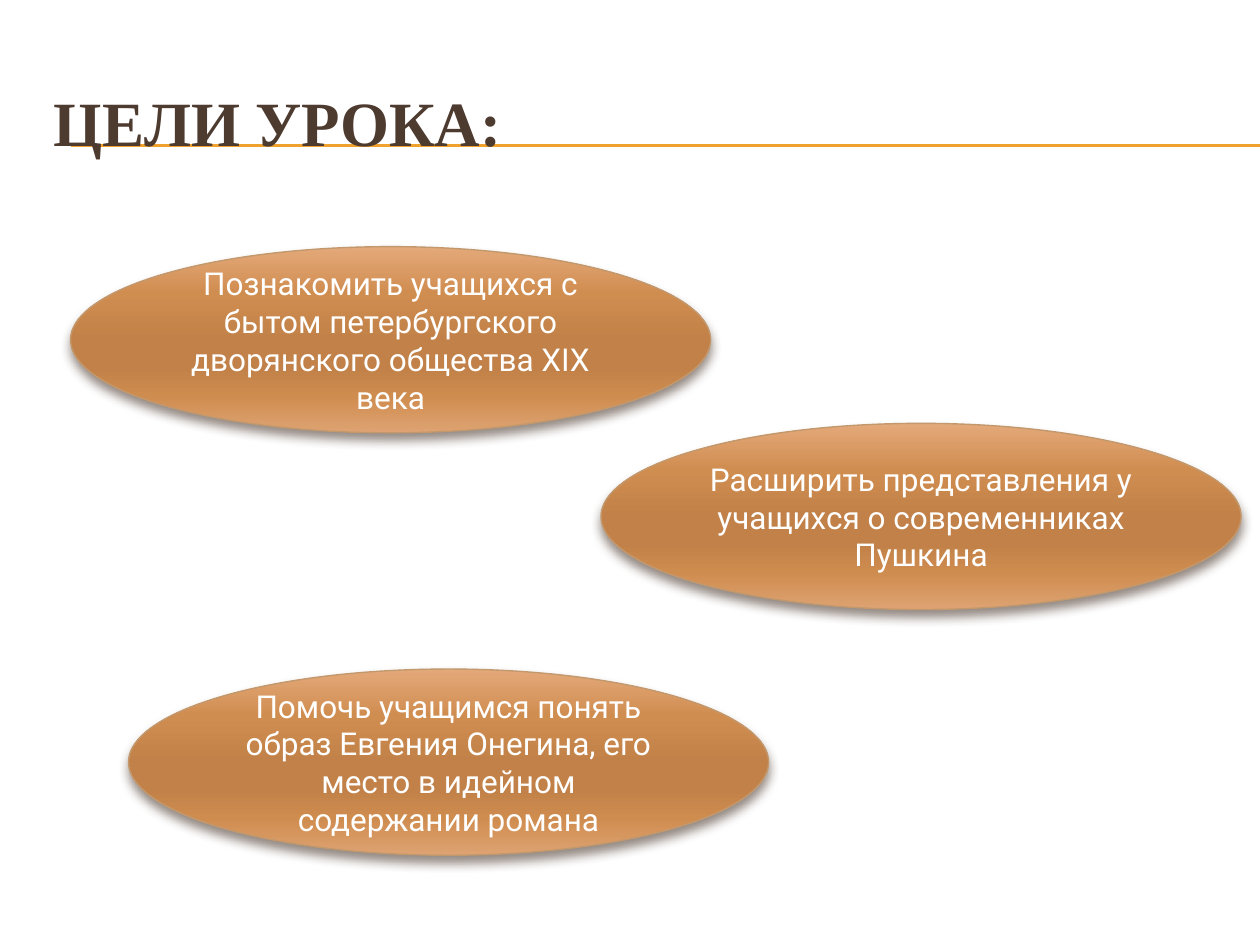
from dataclasses import dataclass

import pptx
import pptx.dml.color
import pptx.enum.shapes
import pptx.enum.text
import pptx.oxml
import pptx.oxml.ns
import pptx.util
from lxml import etree
from pptx.slide import Slide

WIDTH = pptx.util.Inches(10)
HEIGHT = pptx.util.Inches(7.5)

COLORS = {
    "rule": "F0A22E",
    "title": "4E3B30",
    "outline": "C3986D",
    "goal text": "FFFFFF",
    "shadow": "4E3B30",
}
# Position in percent and colour, from top to bottom of an ellipse
GRADIENT = ((0, "E4A97A"), (25, "D08D50"), (50, "C18148"),
            (65, "C18148"), (80, "CF8C4F"), (100, "DEA372"))

# Shares of the slide's width and height
GOAL_WIDTH, GOAL_HEIGHT = 0.508, 0.197
RULE_LEFT = 0.056
RULE_TOPS = (1.15 / 7.5, 1.16 / 7.5)


@dataclass
class Goal:
    text: str
    left: float
    top: float


GOALS = (
    Goal("Расширить представления у учащихся о современниках Пушкина", 0.477, 0.448),
    Goal("Познакомить учащихся с бытом петербургского дворянского общества XIX века",
         0.056, 0.261),
    Goal("Помочь учащимся понять образ Евгения Онегина, его место в идейном "
         "содержании романа", 0.102, 0.708),
)


def x(share: float) -> int:
    return round(WIDTH * share)


def y(share: float) -> int:
    return round(HEIGHT * share)


def rgb(name: str) -> pptx.dml.color.RGBColor:
    return pptx.dml.color.RGBColor.from_string(COLORS[name])


def add_element(parent: etree._Element, tag: str, **attributes: object) -> etree._Element:
    return etree.SubElement(parent, pptx.oxml.ns.qn(tag),
                            {key: str(value) for key, value in attributes.items()})


def draw_rule(slide: Slide, top: float) -> None:
    rule = slide.shapes.add_connector(
        pptx.enum.shapes.MSO_CONNECTOR.STRAIGHT, x(RULE_LEFT), y(top), WIDTH, y(top))
    rule.line.color.rgb = rgb("rule")
    rule.line.width = pptx.util.Pt(0.75)
    add_element(rule._element.spPr, "a:effectLst")


def write(shape, text: str, font: str, size: int, color: str, bold: bool = False,
          alignment=pptx.enum.text.PP_ALIGN.LEFT) -> None:
    frame = shape.text_frame
    frame.word_wrap = True
    frame.vertical_anchor = pptx.enum.text.MSO_ANCHOR.MIDDLE
    paragraph = frame.paragraphs[0]
    paragraph.text = text
    paragraph.alignment = alignment
    paragraph.font.name = font
    paragraph.font.size = pptx.util.Pt(size)
    paragraph.font.bold = bold
    paragraph.font.color.rgb = rgb(color)


def draw_goal(slide: Slide, goal: Goal) -> None:
    ellipse = slide.shapes.add_shape(
        pptx.enum.shapes.MSO_SHAPE.OVAL,
        x(goal.left), y(goal.top), x(GOAL_WIDTH), y(GOAL_HEIGHT))
    ellipse.line.color.rgb = rgb("outline")
    ellipse.line.width = pptx.util.Pt(0.79)
    properties = ellipse._element.spPr

    # Vertical gradient
    ellipse.fill.gradient()
    ellipse.fill.gradient_angle = 270
    stops = properties.find(".//" + pptx.oxml.ns.qn("a:gsLst"))
    for stop in list(stops):
        stops.remove(stop)
    for percent, color in GRADIENT:
        stop = add_element(stops, "a:gs", pos=percent * 1000)
        add_element(stop, "a:srgbClr", val=color)

    # Soft shadow straight below
    ellipse.shadow.inherit = False
    effects = properties.find(pptx.oxml.ns.qn("a:effectLst"))
    shadow = add_element(effects, "a:outerShdw", blurRad=pptx.util.Pt(6),
                         dist=pptx.util.Pt(4), dir=90 * 60000, rotWithShape=0)
    shade = add_element(shadow, "a:srgbClr", val=COLORS["shadow"])
    add_element(shade, "a:alpha", val=60000)

    write(ellipse, goal.text, "Roboto", 18, "goal text",
          alignment=pptx.enum.text.PP_ALIGN.CENTER)


def main() -> None:
    presentation = pptx.Presentation()
    presentation.slide_width, presentation.slide_height = WIDTH, HEIGHT
    slide = presentation.slides.add_slide(presentation.slide_layouts[6])

    # Double rule under the heading
    for top in RULE_TOPS:
        draw_rule(slide, top)

    # Heading
    heading = slide.shapes.add_textbox(x(0.033), y(0.5 / 7.5), x(0.95), y(0.92 / 7.5))
    write(heading, "ЦЕЛИ УРОКА:", "Times New Roman", 36, "title", bold=True)

    # Lesson goals
    for goal in GOALS:
        draw_goal(slide, goal)

    presentation.save("out.pptx")


if __name__ == "__main__":
    main()
